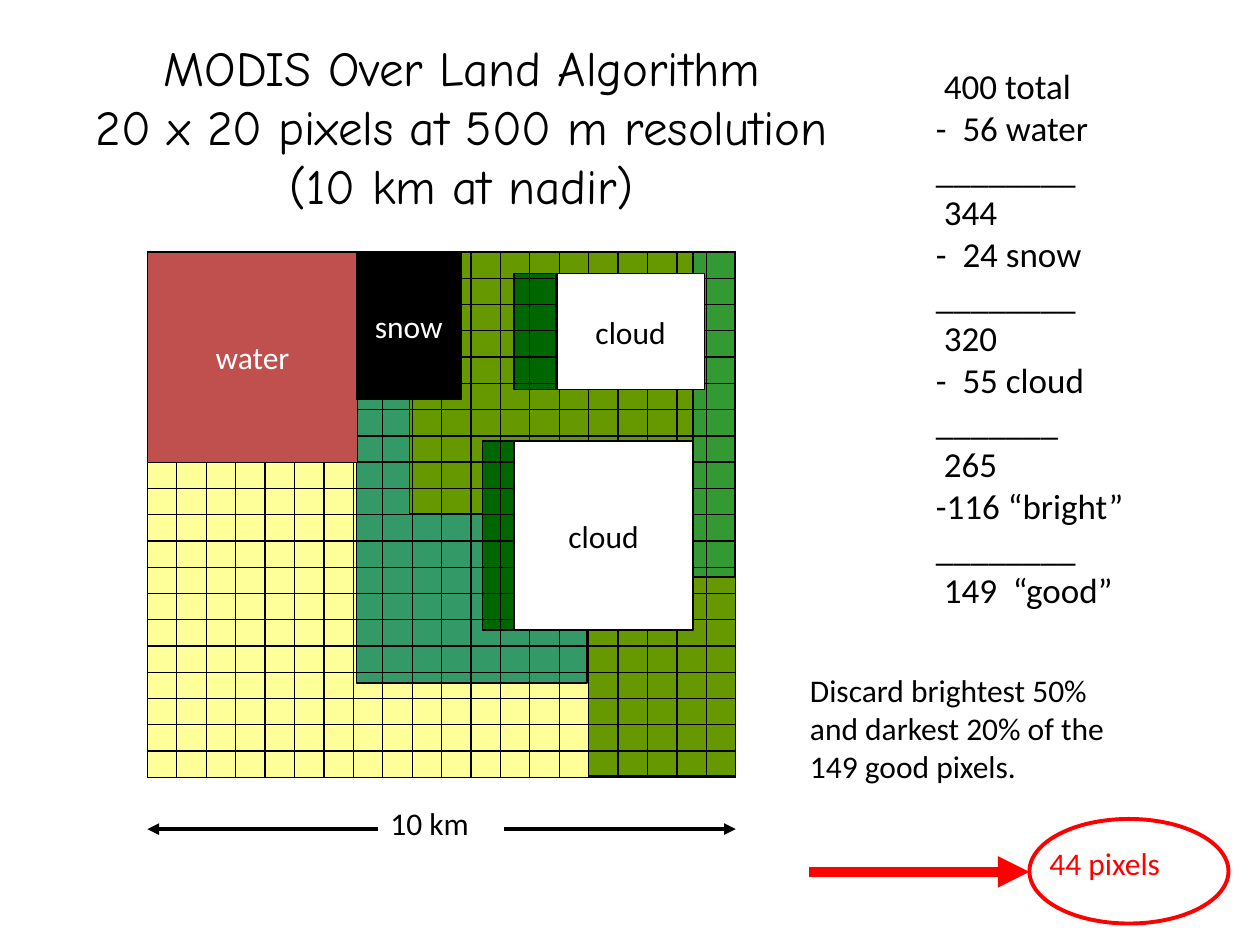
"""Build the slide on pixel selection in the MODIS over-land algorithm."""
from dataclasses import dataclass

from lxml import etree
from pptx import Presentation
from pptx.dml.color import RGBColor
from pptx.enum import shapes, text
from pptx.oxml import ns
from pptx.util import Inches, Pt


@dataclass(frozen=True)
class Theme:
    """Colours, fonts and sizes."""
    black: str = "000000"
    white: str = "FFFFFF"
    red: str = "FF0000"
    water: str = "C0504D"
    bright: str = "FFFF99"
    olive: str = "669900"
    teal: str = "339966"
    green: str = "339933"
    shadow: str = "006600"
    title_font: str = "Comic Neue"
    body_font: str = "Calibri"
    title_size: int = 28
    tally_size: int = 20
    body_size: int = 18
    thin: float = 0.75
    medium: float = 2.25
    thick: float = 6


THEME = Theme()
TITLE = ["MODIS Over Land Algorithm", "20 x 20 pixels at 500 m resolution", "(10 km at nadir)"]
TALLY = [
    " 400 total", "-  56 water", "________",
    " 344", "-  24 snow", "________",
    " 320", "-  55 cloud", "_______",
    " 265", "-116 “bright”", "________",
    " 149  “good”",
]
DISCARD = ["Discard brightest 50%", "and darkest 20% of the", "149 good pixels."]
LEFT, TOP, WIDTH, HEIGHT = 1.17, 2, 4.67, 4.17
RIGHT, BOTTOM = LEFT + WIDTH, TOP + HEIGHT
CELLS = 20
LAND = [
    ((LEFT, TOP, WIDTH, HEIGHT), THEME.bright),
    ((4.67, 4.58, 1.17, 1.58), THEME.olive),
    ((2.83, 3.17, 1.83, 2.25), THEME.teal),
    ((5.5, 2, 0.33, 2.58), THEME.green),
    ((3.25, 2, 2.25, 2.08), THEME.olive),
    ((3.83, 3.5, 0.25, 1.5), THEME.shadow),
    ((4.08, 2.17, 0.33, 0.92), THEME.shadow),
]
MASKS = [
    ("cloud", (4.08, 3.5, 1.42, 1.5), THEME.white, THEME.black),
    ("water", (LEFT, TOP, 1.67, 1.67), THEME.water, THEME.white),
    ("snow", (2.83, TOP, 0.83, 1.17), THEME.black, THEME.white),
    ("cloud", (4.42, 2.17, 1.17, 0.92), THEME.white, THEME.black),
]
SCALE_Y = 6.58
RESULT_BOX = (8.17, 6.5, 1.58, 0.83)
ARROW_Y = 6.92


def write(box, lines, *, size=THEME.body_size, font=THEME.body_font,
          color=THEME.black, align=text.PP_ALIGN.LEFT):
    """Fill a shape with formatted lines, one paragraph each."""
    frame = box.text_frame
    frame.word_wrap = False
    for index, line in enumerate(lines):
        para = frame.add_paragraph() if index else frame.paragraphs[0]
        para.alignment = align
        span = para.add_run()
        span.text = line
        span.font.size = Pt(size)
        span.font.name = font
        span.font.color.rgb = RGBColor.from_string(color)


def add_text(parent, place, lines, **style):
    """Add a text box that grows with its lines."""
    box = parent.add_textbox(*map(Inches, place))
    write(box, lines, **style)
    box.text_frame.auto_size = text.MSO_AUTO_SIZE.SHAPE_TO_FIT_TEXT
    return box


def add_area(parent, place, fill=None, kind=shapes.MSO_SHAPE.RECTANGLE,
             color=THEME.black, weight=THEME.thin):
    """Add an outlined shape, filled when a colour is given."""
    area = parent.add_shape(kind, *map(Inches, place))
    area.shadow.inherit = False
    if fill:
        area.fill.solid()
        area.fill.fore_color.rgb = RGBColor.from_string(fill)
    else:
        area.fill.background()
    area.line.color.rgb = RGBColor.from_string(color)
    area.line.width = Pt(weight)
    return area


def add_line(parent, start, end, color=THEME.black, weight=THEME.thin, arrow=False):
    """Add a straight line, with an arrowhead at its end on request."""
    line = parent.add_connector(shapes.MSO_CONNECTOR.STRAIGHT, *map(Inches, (*start, *end)))
    line.line.color.rgb = RGBColor.from_string(color)
    line.line.width = Pt(weight)
    if arrow:
        etree.SubElement(line.line._get_or_add_ln(), ns.qn("a:tailEnd"), type="triangle")
    etree.SubElement(line._element.spPr, ns.qn("a:effectLst"))
    return line


def add_pixel_map(page):
    """Draw the land areas, pixel grid, masks and scale as one group."""
    group = page.shapes.add_group_shape().shapes
    for place, fill in LAND:
        add_area(group, place, fill)
    for step in range(1, CELLS + 1):
        x = LEFT + WIDTH * step / CELLS
        add_line(group, (x, TOP), (x, BOTTOM))
    for step in range(CELLS + 1):
        y = TOP + HEIGHT * step / CELLS
        add_line(group, (LEFT, y), (RIGHT, y))
    for name, place, fill, color in MASKS:
        mask = add_area(group, place, fill)
        write(mask, [name], color=color, align=text.PP_ALIGN.CENTER)
        mask.text_frame.vertical_anchor = text.MSO_ANCHOR.MIDDLE
    label = add_text(group, (3, 6.33, 1.04, 0.5), ["10 km"])
    west = add_line(group, (3, SCALE_Y), (LEFT, SCALE_Y), weight=THEME.medium, arrow=True)
    west.begin_connect(label, 1)
    add_line(group, (4, SCALE_Y), (RIGHT, SCALE_Y), weight=THEME.medium, arrow=True)


def main():
    """Assemble and save the deck."""
    deck = Presentation()
    deck.slide_width, deck.slide_height = Inches(10), Inches(7.5)
    page = deck.slides.add_slide(deck.slide_layouts[6])
    add_text(page.shapes, (0.41, 0.25, 6.51, 1.51), TITLE, size=THEME.title_size,
             font=THEME.title_font, align=text.PP_ALIGN.CENTER)
    add_pixel_map(page)
    add_text(page.shapes, (7.33, 0.46, 1.72, 4.48), TALLY, size=THEME.tally_size)
    add_text(page.shapes, (6.33, 5.28, 3.36, 1.3), DISCARD)
    add_text(page.shapes, (8.23, 6.65, 1.41, 0.5), ["44 pixels"], color=THEME.red)
    add_line(page.shapes, (6.42, ARROW_Y), (RESULT_BOX[0], ARROW_Y),
             THEME.red, THEME.thick, arrow=True)
    add_area(page.shapes, RESULT_BOX, kind=shapes.MSO_SHAPE.OVAL,
             color=THEME.red, weight=THEME.medium)
    deck.save("out.pptx")


if __name__ == "__main__":
    main()
